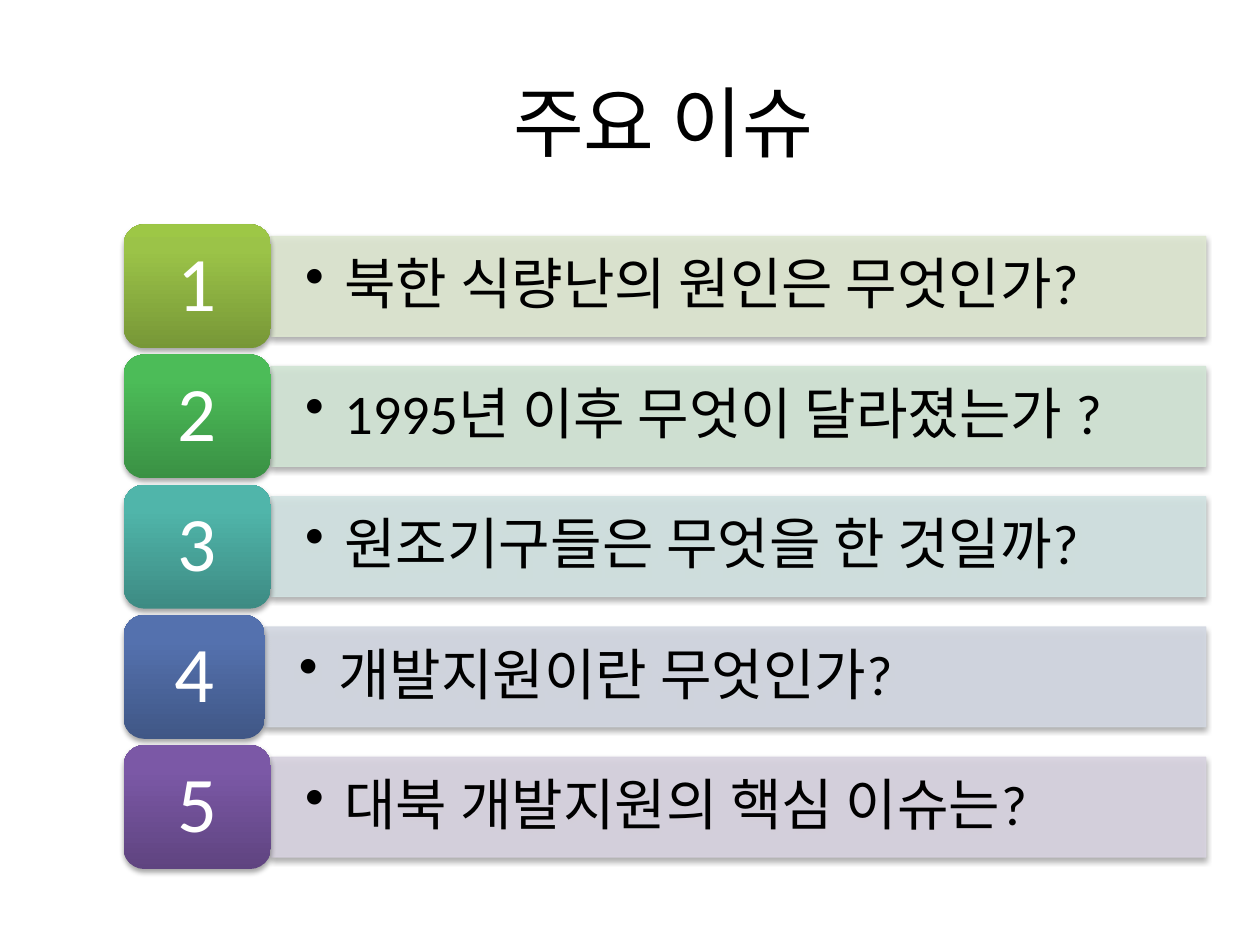
from lxml.etree import SubElement
from pptx import Presentation
from pptx.dml.color import RGBColor
from pptx.enum.shapes import MSO_SHAPE
from pptx.enum.text import MSO_ANCHOR, PP_ALIGN
from pptx.oxml import parse_xml
from pptx.oxml.ns import nsdecls, qn
from pptx.util import Pt

FONT = "Calibri"
BLACK = RGBColor(0x00, 0x00, 0x00)
WHITE = RGBColor(0xFF, 0xFF, 0xFF)

TITLE = "주요 이슈 "
# Question, bar colour, badge gradient (bottom to top), badge width, number size
ISSUES = [
    ("북한 식량난의 원인은 무엇인가?", RGBColor(0xDE, 0xE7, 0xD1),
     ("779737", "9BC348", "9DC746"), 84.2, 44),
    ("1995년 이후 무엇이 달라졌는가 ?", RGBColor(0xD2, 0xE5, 0xD5),
     ("3A9144", "4CBC58", "4ABF57"), 84.2, 44),
    ("원조기구들은 무엇을 한 것일까?", RGBColor(0xD2, 0xE3, 0xE2),
     ("3D8B83", "50B5AA", "4EB8AC"), 84.2, 44),
    ("개발지원이란 무엇인가?", RGBColor(0xD3, 0xD8, 0xE2),
     ("405786", "5471AE", "5271B0"), 80.7, 45),
    ("대북 개발지원의 핵심 이슈는?", RGBColor(0xD8, 0xD3, 0xE0),
     ("5F4480", "7B58A6", "7C57A8"), 84.2, 45),
]

# Layout in points
BADGE_LEFT, BADGE_TOP, BADGE_HEIGHT = 70.6, 128.2, 70.8
ROW_PITCH = 74.4
BAR_RIGHT, BAR_HEIGHT = 689, 57
BULLET_INDENT = 22.5


def write_text(shape, text, size, color, align, inset_x, inset_y):
    frame = shape.text_frame
    frame.word_wrap = True
    frame.vertical_anchor = MSO_ANCHOR.MIDDLE
    frame.margin_left = frame.margin_right = Pt(inset_x)
    frame.margin_top = frame.margin_bottom = Pt(inset_y)
    frame.text = text
    paragraph = frame.paragraphs[0]
    paragraph.alignment = align
    font = paragraph.runs[0].font
    font.name, font.size, font.color.rgb = FONT, Pt(size), color
    return paragraph


def add_bullet(paragraph):
    properties = paragraph._p.get_or_add_pPr()
    properties.set("marL", str(Pt(BULLET_INDENT)))
    properties.set("indent", str(-Pt(BULLET_INDENT)))
    SubElement(properties, qn("a:buChar"), char="•")


def set_alpha(color_format_parent, percent):
    for color in color_format_parent.iter(qn("a:srgbClr")):
        SubElement(color, qn("a:alpha"), val=str(percent * 1000))


def add_shadow(shape):
    shape.shadow.inherit = False
    effects = shape._element.spPr.find(qn("a:effectLst"))
    effects.append(parse_xml(
        f'<a:outerShdw {nsdecls("a")} blurRad="{Pt(3.1)}" dist="{Pt(1.8)}" '
        'dir="5400000" rotWithShape="0"><a:srgbClr val="000000">'
        '<a:alpha val="35000"/></a:srgbClr></a:outerShdw>'))


def fill_gradient(shape, colors):
    stops = "".join(
        f'<a:gs pos="{position * 1000}"><a:srgbClr val="{color}"/></a:gs>'
        for position, color in zip((0, 80, 100), colors))
    shape._element.spPr.find(qn("a:prstGeom")).addnext(parse_xml(
        f'<a:gradFill {nsdecls("a")} rotWithShape="1"><a:gsLst>{stops}</a:gsLst>'
        '<a:lin ang="16200000" scaled="0"/></a:gradFill>'))


presentation = Presentation()
presentation.slide_width, presentation.slide_height = Pt(720), Pt(540)
slide = presentation.slides.add_slide(presentation.slide_layouts[6])

# Title
title = slide.shapes.add_textbox(Pt(66.2), Pt(23.8), Pt(635.8), Pt(90))
write_text(title, TITLE, 44, BLACK, PP_ALIGN.CENTER, 7.2, 3.6)

# Numbered rows: a question bar, then its badge
for index, (question, bar_color, gradient, badge_width, size) in enumerate(ISSUES):
    top = BADGE_TOP + index * ROW_PITCH
    bar_left = BADGE_LEFT + badge_width
    bar = slide.shapes.add_shape(
        MSO_SHAPE.RECTANGLE, Pt(bar_left), Pt(top + (BADGE_HEIGHT - BAR_HEIGHT) / 2),
        Pt(BAR_RIGHT - bar_left), Pt(BAR_HEIGHT))
    bar.fill.solid()
    bar.fill.fore_color.rgb = bar_color
    bar.line.color.rgb = bar_color
    bar.line.width = Pt(0.75)
    set_alpha(bar._element.spPr, 90)
    add_shadow(bar)
    paragraph = write_text(bar, question, 32, BLACK, PP_ALIGN.LEFT, 19.5, 9.8)
    paragraph.line_spacing = 0.9
    add_bullet(paragraph)

    badge = slide.shapes.add_shape(
        MSO_SHAPE.ROUNDED_RECTANGLE, Pt(BADGE_LEFT), Pt(top),
        Pt(badge_width), Pt(BADGE_HEIGHT))
    fill_gradient(badge, gradient)
    badge.line.fill.background()
    add_shadow(badge)
    paragraph = write_text(badge, str(index + 1), size, WHITE, PP_ALIGN.CENTER, 16.6, 10)
    paragraph.line_spacing = 0.9

presentation.save("out.pptx")
